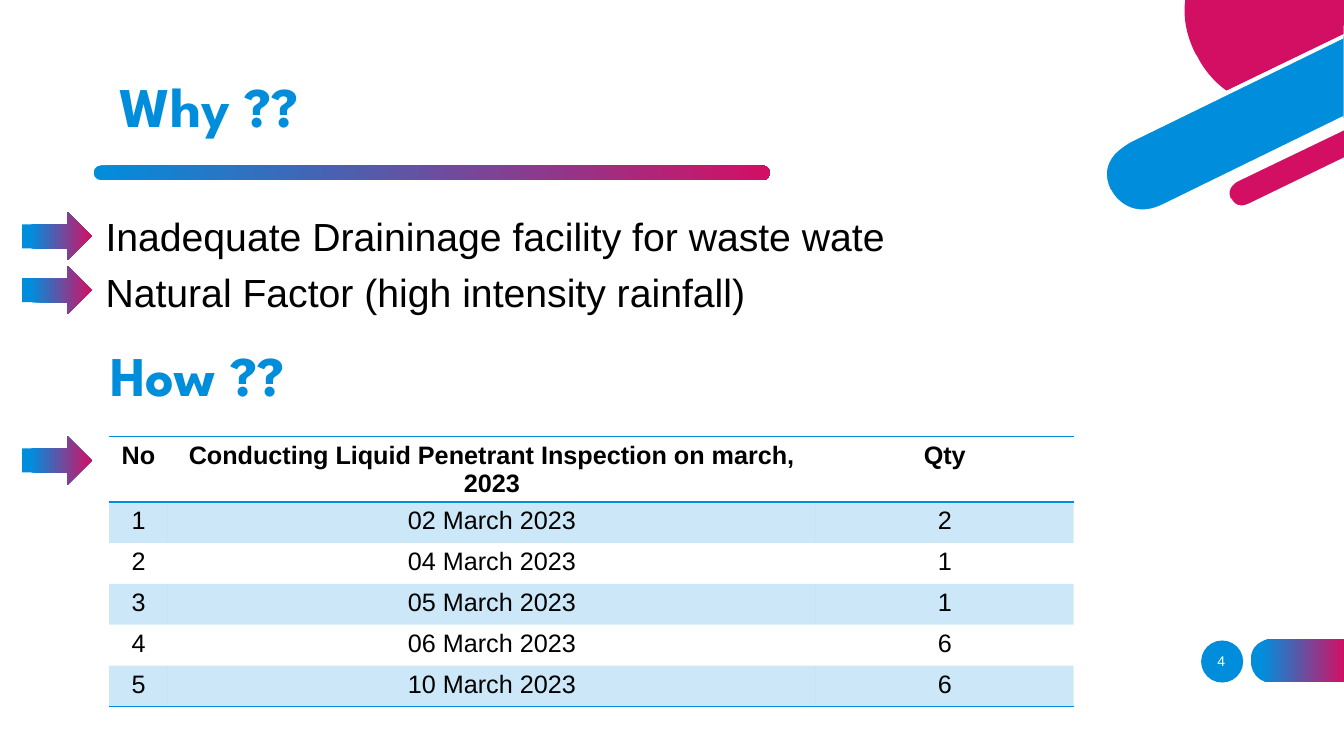
import pptx
import pptx.dml.color
import pptx.enum.shapes
import pptx.enum.text
import pptx.oxml
import pptx.oxml.ns
import pptx.util

Cm, Pt = pptx.util.Cm, pptx.util.Pt
RGBColor = pptx.dml.color.RGBColor
SHAPE = pptx.enum.shapes.MSO_SHAPE
ALIGN = pptx.enum.text.PP_ALIGN
ANCHOR = pptx.enum.text.MSO_ANCHOR
qn = pptx.oxml.ns.qn

BLUE = RGBColor(0x00, 0x8E, 0xDC)
PINK = RGBColor(0xD3, 0x0F, 0x64)
WHITE = RGBColor(0xFF, 0xFF, 0xFF)
BLACK = RGBColor(0x00, 0x00, 0x00)

DRAWING = 'xmlns:a="http://schemas.openxmlformats.org/drawingml/2006/main"'
PLAIN_TABLE = "{2D5ABB26-0587-4C30-8999-92F81FD0307C}"
INCH = 2.54

# Outlines in inches: a pair is a line, three pairs in one tuple are a curve.
PAGE_TAB = [(12.62, 6.77), (13.34, 6.77), (13.34, 6.34), (12.62, 6.34),
            (12.62, 6.34, 12.41, 6.34, 12.41, 6.55), (12.41, 6.56),
            (12.41, 6.56, 12.41, 6.77, 12.62, 6.77)]
DISC_RIM = [(13.33, 0.81), (13.06, 0.94), (12.74, 1.1, 12.44, 1.08, 12.19, 0.89),
            (11.99, 0.74, 11.89, 0.55, 11.89, 0.55), (11.88, 0.52),
            (11.79, 0.34, 11.75, 0.16, 11.78, 0), (11.74, 0),
            (11.71, 0.17, 11.75, 0.35, 11.84, 0.54), (11.86, 0.57),
            (11.86, 0.58, 11.96, 0.77, 12.16, 0.92),
            (12.28, 1.01, 12.44, 1.09, 12.65, 1.09),
            (12.77, 1.09, 12.91, 1.06, 13.08, 0.98), (13.33, 0.86)]
WIDE_BAND = [(11.21, 1.39), (11.21, 1.39, 10.85, 1.57, 11.01, 1.89), (11.01, 1.9),
             (11.01, 1.9, 11.17, 2.22, 11.54, 2.04), (13.33, 1.17), (13.33, 0.36)]
DISC = [(11.88, 0.56), (11.88, 0.56, 11.97, 0.76, 12.17, 0.9), (13.33, 0.34),
        (13.34, 0), (11.76, 0), (11.74, 0.15, 11.76, 0.33, 11.86, 0.53)]
THIN_BAND = [(13.34, 1.26), (12.27, 1.78), (12.27, 1.78, 12.13, 1.85, 12.2, 1.97),
             (12.2, 1.98), (12.2, 1.98, 12.26, 2.11, 12.4, 2.04), (13.34, 1.58)]
THIN_RIM = [(12.39, 2.02), (12.27, 2.08, 12.22, 1.98, 12.22, 1.97), (12.21, 1.97),
            (12.16, 1.86, 12.28, 1.8, 12.28, 1.8), (13.34, 1.29), (13.34, 1.24),
            (12.26, 1.76), (12.26, 1.76, 12.19, 1.8, 12.17, 1.87),
            (12.15, 1.91, 12.16, 1.95, 12.18, 1.99),
            (12.2, 2.03, 12.25, 2.08, 12.32, 2.08),
            (12.35, 2.08, 12.38, 2.08, 12.41, 2.06), (13.34, 1.61), (13.34, 1.56)]
WIDE_RIM = [(11.53, 2.03), (11.19, 2.19, 11.03, 1.9, 11.03, 1.89), (11.02, 1.88),
            (10.96, 1.75, 10.97, 1.64, 11.06, 1.53),
            (11.13, 1.46, 11.22, 1.41, 11.22, 1.41), (13.33, 0.38), (13.33, 0.34),
            (11.2, 1.37), (11.19, 1.38, 11.02, 1.46, 10.96, 1.63),
            (10.93, 1.71, 10.94, 1.8, 10.99, 1.9), (10.99, 1.91),
            (10.99, 1.91, 11.1, 2.12, 11.33, 2.12),
            (11.39, 2.12, 11.46, 2.1, 11.54, 2.06), (13.33, 1.19), (13.33, 1.15)]
CORNER = [(DISC_RIM, WHITE), (WIDE_BAND, BLUE), (DISC, PINK), (THIN_BAND, PINK),
          (THIN_RIM, WHITE), (WIDE_RIM, WHITE)]

REASONS = ["Inadequate Draininage facility for waste wate",
           "Natural Factor (high intensity rainfall)"]
INSPECTIONS = [("No", "Conducting Liquid Penetrant Inspection on march, 2023", "Qty"),
               ("1", "02 March 2023", "2"),
               ("2", "04 March 2023", "1"),
               ("3", "05 March 2023", "1"),
               ("4", "06 March 2023", "6"),
               ("5", "10 March 2023", "6")]


def blend(fill, start=0.0):
    """Fill from blue to pink, left to right."""
    fill.gradient()
    fill.gradient_angle = 0
    first, last = fill.gradient_stops
    first.color.rgb, first.position = BLUE, start
    last.color.rgb, last.position = PINK, 1.0


def finish(shape, color=None, start=0.0):
    """Drop shadow and line; fill with a colour, or the blend if none is given."""
    shape.shadow.inherit = False
    shape.line.fill.background()
    if color is None:
        blend(shape.fill, start)
    else:
        shape.fill.solid()
        shape.fill.fore_color.rgb = color


def add_preset(slide, kind, left, top, width, height, **look):
    shape = slide.shapes.add_shape(kind, Cm(left), Cm(top), Cm(width), Cm(height))
    finish(shape, **look)
    return shape


def add_arrow(slide, top):
    add_preset(slide, SHAPE.RIGHT_ARROW, 0.56, top, 1.75, 1.21, start=0.12)


def add_outline(slide, outline, **look):
    """Lay every point as a line, then join the points of each curve."""
    points = [(Cm(x * INCH), Cm(y * INCH))
              for step in outline for x, y in zip(step[::2], step[1::2])]
    builder = slide.shapes.build_freeform(*points[0])
    builder.add_line_segments(points[1:], close=True)
    shape = builder.convert_to_shape()
    lines = iter(shape._element.findall(".//" + qn("a:lnTo")))
    for step in outline[1:]:
        line = next(lines)
        if len(step) == 6:
            curve = pptx.oxml.parse_xml(f"<a:cubicBezTo {DRAWING}/>")
            line.addprevious(curve)
            for part in (line, next(lines), next(lines)):
                curve.append(part[0])
                part.getparent().remove(part)
    finish(shape, **look)


def write(paragraph, text, size=18, color=BLACK, font="Arial", bold=False,
          align=ALIGN.LEFT, spacing=None, before=None):
    run = paragraph.add_run()
    run.text = text
    run.font.name, run.font.size, run.font.bold = font, Pt(size), bold
    if color is None:
        blend(run.font.fill)
    else:
        run.font.color.rgb = color
    paragraph.alignment = align
    if spacing is not None:
        paragraph.line_spacing = spacing
    if before is not None:
        paragraph.space_before = Pt(before)


def add_text(slide, left, top, width, height, lines, anchor=ANCHOR.MIDDLE, **style):
    frame = slide.shapes.add_textbox(Cm(left), Cm(top), Cm(width), Cm(height)).text_frame
    frame.word_wrap = True
    frame.vertical_anchor = anchor
    for i, line in enumerate(lines):
        write(frame.add_paragraph() if i else frame.paragraphs[0], line, **style)


def add_heading(slide, left, top, text):
    add_text(slide, left, top, 25.15, 2.62, [text], size=40, color=None,
             font="League Spartan", bold=True, spacing=0.9)


def set_borders(cell, sides):
    """Rule the given sides; line elements come before the fill."""
    properties = cell._tc.get_or_add_tcPr()
    for i, side in enumerate(sides):
        properties.insert(i, pptx.oxml.parse_xml(
            f'<a:{side} {DRAWING} w="12700"><a:solidFill><a:srgbClr val="{BLUE}"/>'
            f'</a:solidFill></a:{side}>'))


def tint(cell):
    """Fill with blue at 20 % opacity."""
    cell.fill.solid()
    cell.fill.fore_color.rgb = BLUE
    color = cell._tc.tcPr.find(".//" + qn("a:srgbClr"))
    color.append(pptx.oxml.parse_xml(f'<a:alpha {DRAWING} val="20000"/>'))


def add_inspections(slide, left, top, widths, row_height):
    last = len(INSPECTIONS) - 1
    table = slide.shapes.add_table(len(INSPECTIONS), len(widths), Cm(left), Cm(top),
                                   Cm(sum(widths)), Cm(row_height * (last + 1))).table
    table.first_row = table.horz_banding = False
    table._tbl.tblPr.find(qn("a:tableStyleId")).text = PLAIN_TABLE
    for column, width in zip(table.columns, widths):
        column.width = Cm(width)
    for r, entries in enumerate(INSPECTIONS):
        table.rows[r].height = Cm(row_height)
        for c, entry in enumerate(entries):
            cell = table.cell(r, c)
            cell.margin_bottom = Cm(0.13 if r else 0)
            write(cell.text_frame.paragraphs[0], entry, bold=r == 0, align=ALIGN.CENTER)
            if r % 2:
                tint(cell)
            else:
                cell.fill.background()
            set_borders(cell, {0: ["lnT", "lnB"], last: ["lnB"]}.get(r, []))


def main():
    deck = pptx.Presentation()
    deck.slide_width, deck.slide_height = Cm(33.87), Cm(19.05)
    slide = deck.slides.add_slide(deck.slide_layouts[6])

    # Page number, corner decoration and rule
    add_preset(slide, SHAPE.OVAL, 30.27, 16.14, 1.06, 1.06, color=BLUE)
    add_outline(slide, PAGE_TAB, start=0.12)
    for outline, color in CORNER:
        add_outline(slide, outline, color=color)
    rule = add_preset(slide, SHAPE.ROUNDED_RECTANGLE, 2.36, 4.17, 17.04, 0.37)
    rule.adjustments[0] = 0.5
    add_text(slide, 30.02, 16.15, 1.52, 1.02, ["4"], size=10, color=WHITE,
             align=ALIGN.CENTER)

    # Reasons
    add_text(slide, 2.41, 5.35, 29.21, 2.84, REASONS, anchor=ANCHOR.TOP, size=28,
             spacing=0.9, before=10)
    add_arrow(slide, 5.35)
    add_heading(slide, 2.76, 1.45, "Why ??")
    add_arrow(slide, 6.71)

    # Inspections
    add_inspections(slide, 2.75, 11, [1.48, 16.33, 6.5], 1.03)
    add_heading(slide, 2.53, 8.23, "How ??")
    add_arrow(slide, 11)

    deck.save("out.pptx")


if __name__ == "__main__":
    main()
